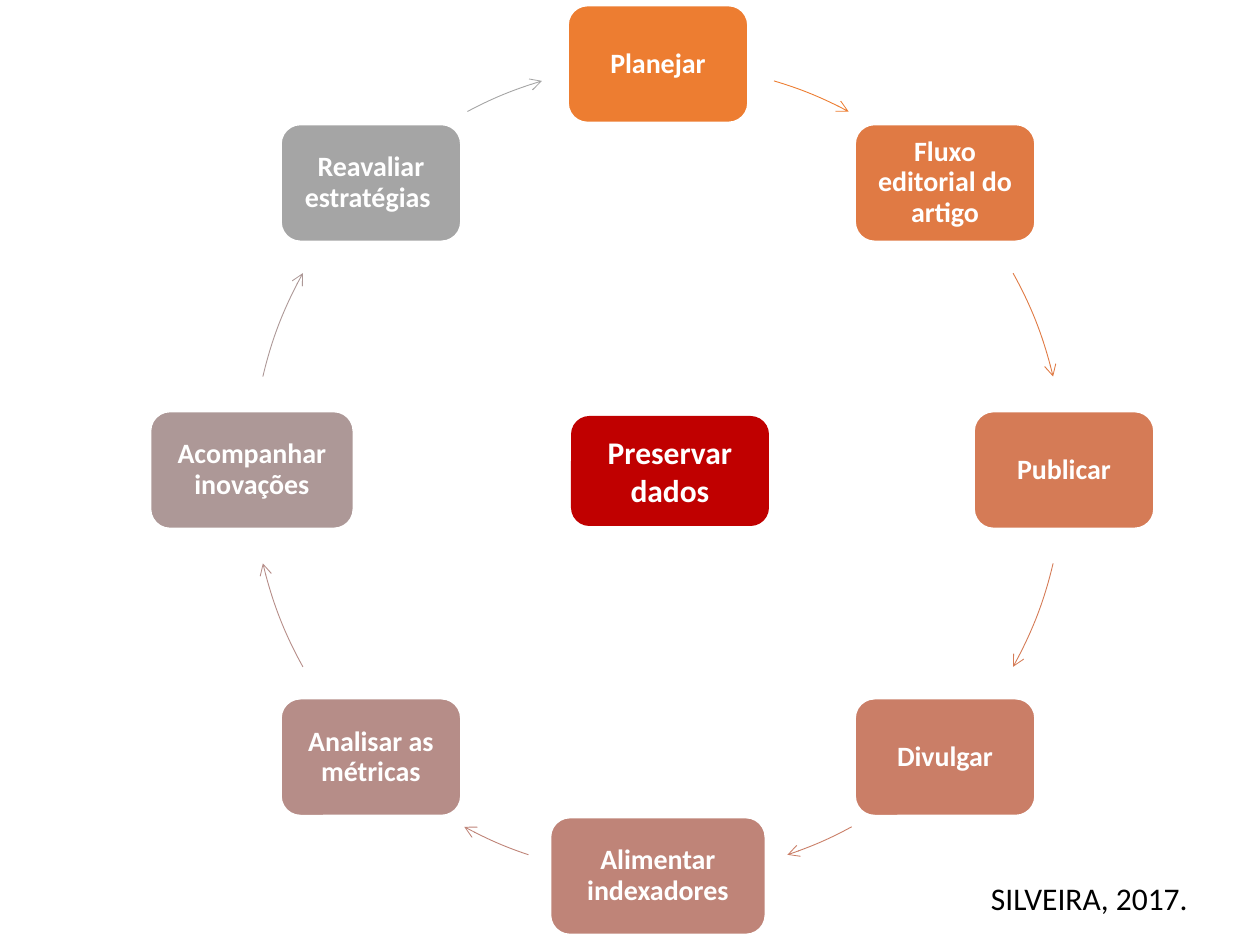
from dataclasses import dataclass
from math import cos, radians, sin

from lxml.etree import SubElement
from pptx import Presentation
from pptx.dml.color import RGBColor
from pptx.enum.shapes import MSO_SHAPE
from pptx.enum.text import MSO_ANCHOR, MSO_AUTO_SIZE, PP_ALIGN
from pptx.oxml.ns import qn
from pptx.util import Emu, Pt

EMU_PER_PX = 914400 / 126
FONT = "Calibri"
COLORS = {
    "plan": "ED7D31",
    "flow": "E07A44",
    "publish": "D57B56",
    "promote": "CA7E67",
    "index": "BF8478",
    "analyse": "B68D88",
    "follow": "AD9897",
    "review": "A5A5A5",
    "preserve": "C00000",
    "white": "FFFFFF",
    "black": "000000",
}
CENTER_X, CENTER_Y, RADIUS = 658, 470, 406
STAGE_HEIGHT = 117


@dataclass
class Stage:
    label: str
    color: str
    width: int = 180


STAGES = [
    Stage("Planejar", "plan"),
    Stage("Fluxo editorial do artigo", "flow"),
    Stage("Publicar", "publish"),
    Stage("Divulgar", "promote"),
    Stage("Alimentar indexadores", "index", 215),
    Stage("Analisar as métricas", "analyse"),
    Stage("Acompanhar inovações", "follow", 203),
    Stage("Reavaliar estratégias ", "review"),
]

# Arrow spans in degrees clockwise from the top; the left half mirrors the right
RIGHT_SPANS = [(16.6, 28), (61, 76.7), (103.3, 119), (151.5, 161.4)]
SPANS = RIGHT_SPANS + [(360 - end, 360 - start) for start, end in reversed(RIGHT_SPANS)]


def px(value: float) -> Emu:
    return Emu(round(value * EMU_PER_PX))


def rgb(name: str) -> RGBColor:
    return RGBColor.from_string(COLORS[name])


def write(frame, text: str, *, size: int, color: str = "white", bold: bool = True,
          align=PP_ALIGN.CENTER, spacing: float = 1.0, wrap: bool = True,
          inset_x: int = 13, inset_y: int = 6) -> None:
    frame.word_wrap = wrap
    frame.margin_left = frame.margin_right = px(inset_x)
    frame.margin_top = frame.margin_bottom = px(inset_y)
    paragraph = frame.paragraphs[0]
    paragraph.alignment = align
    paragraph.line_spacing = spacing
    run = paragraph.add_run()
    run.text = text
    run.font.name = FONT
    run.font.size = Pt(size)
    run.font.bold = bold
    run.font.color.rgb = rgb(color)


def add_box(slide, left: float, top: float, width: int, height: int, color: str):
    box = slide.shapes.add_shape(
        MSO_SHAPE.ROUNDED_RECTANGLE, px(left), px(top), px(width), px(height))
    box.shadow.inherit = False
    box.fill.solid()
    box.fill.fore_color.rgb = rgb(color)
    box.line.fill.background()
    box.text_frame.vertical_anchor = MSO_ANCHOR.MIDDLE
    return box


def add_stage(slide, stage: Stage, angle: float) -> None:
    x = CENTER_X + RADIUS * sin(radians(angle))
    y = CENTER_Y - RADIUS * cos(radians(angle))
    box = add_box(slide, x - stage.width / 2, y - STAGE_HEIGHT / 2,
                  stage.width, STAGE_HEIGHT, stage.color)
    box.line.color.rgb = rgb("white")
    box.line.width = Pt(1)
    write(box.text_frame, stage.label, size=16, spacing=0.9, inset_x=9, inset_y=9)


def add_arc_arrow(slide, span: tuple[float, float], color: str) -> None:
    arc = slide.shapes.add_shape(
        MSO_SHAPE.ARC, px(CENTER_X - RADIUS), px(CENTER_Y - RADIUS),
        px(2 * RADIUS), px(2 * RADIUS))
    # Arc angles count from the right, in 1/60000 degree; adjustments are per 100000
    for index, angle in enumerate(span):
        arc.adjustments[index] = (angle - 90) % 360 * 0.6
    arc.shadow.inherit = False
    arc.fill.background()
    arc.line.color.rgb = rgb(color)
    arc.line.width = Pt(0.5)
    SubElement(arc.line._get_or_add_ln(), qn("a:tailEnd"), type="arrow")


def main() -> None:
    deck = Presentation()
    deck.slide_width, deck.slide_height = px(1260), px(945)
    slide = deck.slides.add_slide(deck.slide_layouts[6])

    # Cycle of stages
    step = 360 / len(STAGES)
    for position, (stage, span) in enumerate(zip(STAGES, SPANS)):
        add_stage(slide, stage, position * step)
        add_arc_arrow(slide, span, stage.color)

    # Citation
    citation = slide.shapes.add_textbox(px(978), px(873), px(224), px(50)).text_frame
    citation.auto_size = MSO_AUTO_SIZE.SHAPE_TO_FIT_TEXT
    write(citation, "SILVEIRA, 2017.", size=18, color="black", bold=False,
          align=PP_ALIGN.LEFT, wrap=False)

    # Core of the cycle
    core = add_box(slide, 571, 416, 198, 110, "preserve")
    write(core.text_frame, "Preservar dados", size=18)

    deck.save("out.pptx")


if __name__ == "__main__":
    main()
